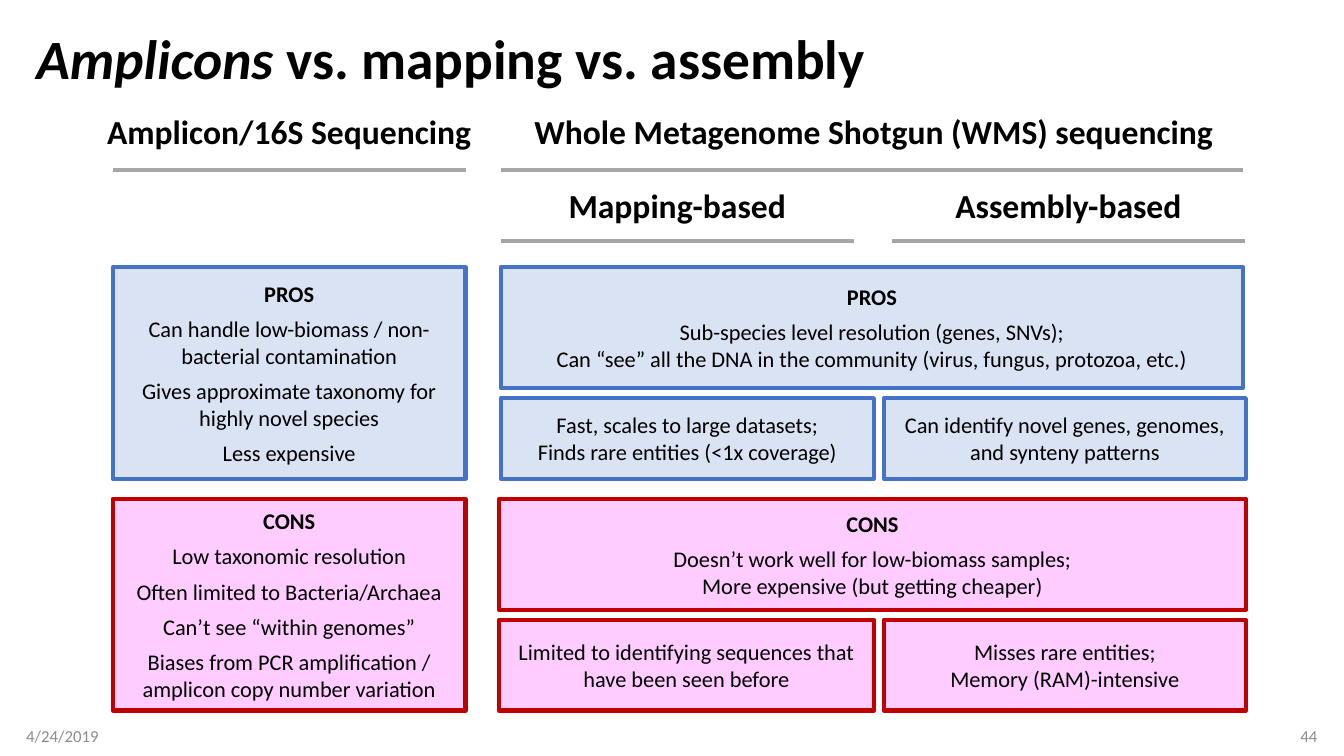
"""Build the slide comparing amplicon, mapping and assembly sequencing."""
from dataclasses import dataclass

from lxml.etree import SubElement
from pptx import Presentation
from pptx.dml.color import RGBColor
from pptx.enum.shapes import MSO_CONNECTOR, MSO_SHAPE
from pptx.enum.text import MSO_ANCHOR, MSO_AUTO_SIZE, PP_ALIGN
from pptx.oxml.ns import qn
from pptx.slide import Slide
from pptx.text.text import TextFrame, _Paragraph
from pptx.util import Pt

COLORS = {
    "text": "000000", "footer": "8C8C8C", "rule": "A6A6A6",
    "pros fill": "DAE3F3", "pros line": "4472C4",
    "cons fill": "FFCCFF", "cons line": "C00000",
}
FONT = "Calibri"
MARGIN = 18.7
AMPLICON_LEFT, WMS_LEFT, CONS_LEFT, ASSEMBLY_LEFT = 80.6, 357.8, 356.4, 631.4
AMPLICON_WIDTH, ASSEMBLY_WIDTH = 252, 258.5
PROS_TOP, PROS_DETAIL_TOP, CONS_TOP, CONS_DETAIL_TOP = 190.8, 284.4, 356.4, 442.8
HEADING_TOP, SUBHEADING_TOP = 75.6, 128.9
RULE_TOP, SUBRULE_TOP = 121.7, 172.1


@dataclass(frozen=True)
class Heading:
    """A bold column heading."""
    text: str
    left: float
    top: float
    width: float


@dataclass(frozen=True)
class Rule:
    """A horizontal line under a heading."""
    left: float
    top: float
    width: float


@dataclass(frozen=True)
class Card:
    """A box of pros or cons, with a title if it opens its group."""
    kind: str
    left: float
    top: float
    width: float
    height: float
    points: tuple[str, ...]
    titled: bool = False


@dataclass(frozen=True)
class Footer:
    """A small grey note at the bottom edge."""
    text: str
    left: float
    align: PP_ALIGN
    inset_left: float
    inset_right: float


HEADINGS = (
    Heading("Amplicon/16S Sequencing", 62.6, HEADING_TOP, 288),
    Heading("Whole Metagenome Shotgun (WMS) sequencing", 365, HEADING_TOP, 518.4),
    Heading("Mapping-based", 368.6, SUBHEADING_TOP, 230.4),
    Heading("Assembly-based", 648, SUBHEADING_TOP, 230.4),
)
RULES = (
    Rule(AMPLICON_LEFT, RULE_TOP, AMPLICON_WIDTH),
    Rule(WMS_LEFT, RULE_TOP, 530),
    Rule(WMS_LEFT, SUBRULE_TOP, AMPLICON_WIDTH),
    Rule(637.2, SUBRULE_TOP, AMPLICON_WIDTH),
)
CARDS = (
    Card("pros", AMPLICON_LEFT, PROS_TOP, AMPLICON_WIDTH, 151.2, (
        "Can handle low-biomass / non-bacterial contamination",
        "Gives approximate taxonomy for highly novel species",
        "Less expensive"), True),
    Card("cons", AMPLICON_LEFT, CONS_TOP, AMPLICON_WIDTH, 151.2, (
        "Low taxonomic resolution",
        "Often limited to Bacteria/Archaea",
        "Can’t see “within genomes”",
        "Biases from PCR amplification / amplicon copy number variation"), True),
    Card("pros", WMS_LEFT, PROS_DETAIL_TOP, 266.4, 57.6, (
        "Fast, scales to large datasets;\nFinds rare entities (<1x coverage)",)),
    Card("cons", CONS_LEFT, CONS_DETAIL_TOP, 267.8, 64.8, (
        "Limited to identifying sequences that have been seen before",)),
    Card("pros", ASSEMBLY_LEFT, PROS_DETAIL_TOP, ASSEMBLY_WIDTH, 57.6, (
        "Can identify novel genes, genomes, and synteny patterns",)),
    Card("cons", ASSEMBLY_LEFT, CONS_DETAIL_TOP, ASSEMBLY_WIDTH, 64.8, (
        "Misses rare entities;\nMemory (RAM)-intensive",)),
    Card("pros", WMS_LEFT, PROS_TOP, 530, 86.4, (
        "Sub-species level resolution (genes, SNVs);\n"
        "Can “see” all the DNA in the community (virus, fungus, protozoa, etc.)",), True),
    Card("cons", CONS_LEFT, CONS_TOP, 533.5, 79.2, (
        "Doesn’t work well for low-biomass samples;\n"
        "More expensive (but getting cheaper)",), True),
)
FOOTERS = (
    Footer("4/24/2019", MARGIN, PP_ALIGN.LEFT, 0, 7.2),
    Footer("44", 725, PP_ALIGN.RIGHT, 7.2, 0),
)


def color(name: str) -> RGBColor:
    """Look up a named colour."""
    return RGBColor.from_string(COLORS[name])


def add_run(paragraph: _Paragraph, text: str, size: float, bold: bool = False,
            italic: bool = False, ink: str = "text") -> None:
    """Append formatted text, turning newlines into line breaks."""
    for index, line in enumerate(text.split("\n")):
        if index:
            paragraph.add_line_break()
        run = paragraph.add_run()
        run.text = line
        run.font.name = FONT
        run.font.size = Pt(size)
        run.font.bold = bold
        run.font.italic = italic
        run.font.color.rgb = color(ink)


def add_text_frame(slide: Slide, left: float, top: float, width: float,
                   height: float) -> TextFrame:
    """Add a wrapping text box and return its frame."""
    frame = slide.shapes.add_textbox(Pt(left), Pt(top), Pt(width), Pt(height)).text_frame
    frame.word_wrap = True
    return frame


def format_title(slide: Slide) -> None:
    """Place the title placeholder and fill it."""
    title = slide.shapes.title
    title.left, title.top, title.width, title.height = Pt(MARGIN), Pt(18), Pt(922.3), Pt(51.8)
    frame = title.text_frame
    frame.auto_size = MSO_AUTO_SIZE.NONE
    frame.vertical_anchor = MSO_ANCHOR.MIDDLE
    paragraph = frame.paragraphs[0]
    paragraph.alignment = PP_ALIGN.LEFT
    paragraph.line_spacing = 0.9
    add_run(paragraph, "Amplicons", 39.6, bold=True, italic=True)
    add_run(paragraph, " vs. mapping vs. assembly", 39.6, bold=True)


def draw_heading(slide: Slide, heading: Heading) -> None:
    """Draw a column heading."""
    frame = add_text_frame(slide, heading.left, heading.top, heading.width, 36)
    frame.auto_size = MSO_AUTO_SIZE.SHAPE_TO_FIT_TEXT
    frame.paragraphs[0].alignment = PP_ALIGN.CENTER
    add_run(frame.paragraphs[0], heading.text, 24, bold=True)


def draw_rule(slide: Slide, rule: Rule) -> None:
    """Draw a heading rule without a shadow."""
    line = slide.shapes.add_connector(
        MSO_CONNECTOR.STRAIGHT, Pt(rule.left), Pt(rule.top),
        Pt(rule.left + rule.width), Pt(rule.top))
    line.line.color.rgb = color("rule")
    line.line.width = Pt(3)
    SubElement(line._element.spPr, qn("a:effectLst"))


def draw_card(slide: Slide, card: Card) -> None:
    """Draw a pros or cons box."""
    box = slide.shapes.add_shape(MSO_SHAPE.RECTANGLE, Pt(card.left), Pt(card.top),
                                 Pt(card.width), Pt(card.height))
    box.shadow.inherit = False
    box.fill.solid()
    box.fill.fore_color.rgb = color(f"{card.kind} fill")
    box.line.color.rgb = color(f"{card.kind} line")
    box.line.width = Pt(3)
    frame = box.text_frame
    frame.word_wrap = True
    frame.vertical_anchor = MSO_ANCHOR.MIDDLE
    title = (card.kind.upper(),) if card.titled else ()
    for index, text in enumerate(title + card.points):
        paragraph = frame.add_paragraph() if index else frame.paragraphs[0]
        paragraph.alignment = PP_ALIGN.CENTER
        paragraph.space_after = Pt(6)
        add_run(paragraph, text, 16, bold=card.titled and index == 0)


def draw_footer(slide: Slide, footer: Footer) -> None:
    """Draw the date or the slide number."""
    frame = add_text_frame(slide, footer.left, 511.2, 216, 28.8)
    frame.vertical_anchor = MSO_ANCHOR.MIDDLE
    frame.margin_left, frame.margin_right = Pt(footer.inset_left), Pt(footer.inset_right)
    frame.paragraphs[0].alignment = footer.align
    add_run(frame.paragraphs[0], footer.text, 12, ink="footer")


def main() -> None:
    """Build and save the slide."""
    deck = Presentation()
    deck.slide_width, deck.slide_height = Pt(960), Pt(540)
    slide = deck.slides.add_slide(deck.slide_layouts.get_by_name("Title Only"))
    format_title(slide)
    for footer in FOOTERS:
        draw_footer(slide, footer)
    for heading in HEADINGS:
        draw_heading(slide, heading)
    for rule in RULES:
        draw_rule(slide, rule)
    for card in CARDS:
        draw_card(slide, card)
    deck.save("out.pptx")


if __name__ == "__main__":
    main()
